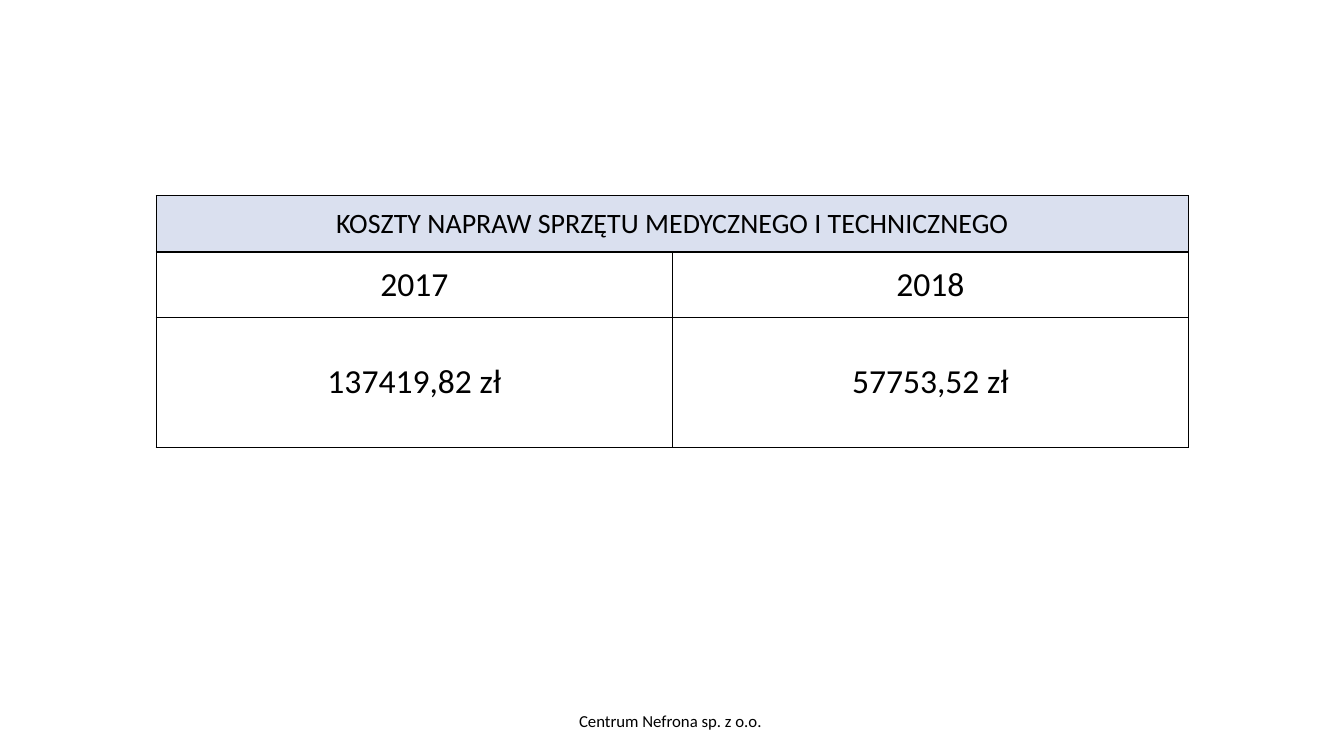
from dataclasses import dataclass

from lxml import etree
from pptx import Presentation
from pptx import util as u
from pptx.dml.color import RGBColor
from pptx.enum import text
from pptx.oxml import ns


@dataclass
class Theme:
    font: str = "Calibri"
    ink: str = "000000"
    head: str = "DAE0EF"
    plain: str = "FFFFFF"
    head_size: int = 20
    cell_size: int = 24
    foot_size: int = 12
    border: float = 1
    inset: float = 0.1


class Page:
    def __init__(self, slide, theme):
        self.slide = slide
        self.theme = theme

    def label(self, frame, words, size):
        frame.text = words
        para = frame.paragraphs[0]
        para.alignment = text.PP_ALIGN.CENTER
        for run in para.runs:
            run.font.name = self.theme.font
            run.font.size = u.Pt(size)
            run.font.color.rgb = RGBColor.from_string(self.theme.ink)

    def frame_cell(self, cell):
        props = cell._tc.get_or_add_tcPr()
        for i, side in enumerate(("lnL", "lnR", "lnT", "lnB")):
            line = etree.Element(ns.qn(f"a:{side}"), w=str(u.Pt(self.theme.border)))
            fill = etree.SubElement(line, ns.qn("a:solidFill"))
            etree.SubElement(fill, ns.qn("a:srgbClr"), val=self.theme.ink)
            props.insert(i, line)

    def style_cell(self, cell, color):
        cell.fill.solid()
        cell.fill.fore_color.rgb = RGBColor.from_string(color)
        cell.vertical_anchor = text.MSO_ANCHOR.MIDDLE
        pad = u.Cm(self.theme.inset)
        cell.margin_left = cell.margin_right = pad
        cell.margin_top = cell.margin_bottom = pad
        self.frame_cell(cell)

    def table(self, left, top, width, heights, title, rows):
        cols = len(rows[0])
        grid = self.slide.shapes.add_table(
            len(heights), cols, u.Cm(left), u.Cm(top), u.Cm(width), u.Cm(sum(heights))
        ).table
        for row, high in zip(grid.rows, heights):
            row.height = u.Cm(high)
        # Title row across all columns
        grid.cell(0, 0).merge(grid.cell(0, cols - 1))
        for c in range(cols):
            self.style_cell(grid.cell(0, c), self.theme.head)
        self.label(grid.cell(0, 0).text_frame, title, self.theme.head_size)
        # Years and costs
        for r, row in enumerate(rows, 1):
            for c, words in enumerate(row):
                cell = grid.cell(r, c)
                self.style_cell(cell, self.theme.plain)
                self.label(cell.text_frame, words, self.theme.cell_size)

    def footer(self, left, top, width, height, words):
        box = self.slide.shapes.add_textbox(
            u.Cm(left), u.Cm(top), u.Cm(width), u.Cm(height)
        )
        box.text_frame.word_wrap = True
        box.text_frame.vertical_anchor = text.MSO_ANCHOR.MIDDLE
        self.label(box.text_frame, words, self.theme.foot_size)


def main():
    deck = Presentation()
    deck.slide_width, deck.slide_height = u.Cm(33.87), u.Cm(19.05)
    page = Page(deck.slides.add_slide(deck.slide_layouts[6]), Theme())

    # Repair costs by year
    page.table(
        3.94, 4.93, 26.01, (1.42, 1.65, 3.28),
        "KOSZTY NAPRAW SPRZĘTU MEDYCZNEGO I TECHNICZNEGO",
        [("2017", "2018"), ("137419,82 zł", "57753,52 zł")],
    )

    # Company line
    page.footer(11.23, 17.65, 11.43, 1.02, "Centrum Nefrona sp. z o.o. ")

    deck.save("out.pptx")


if __name__ == "__main__":
    main()
